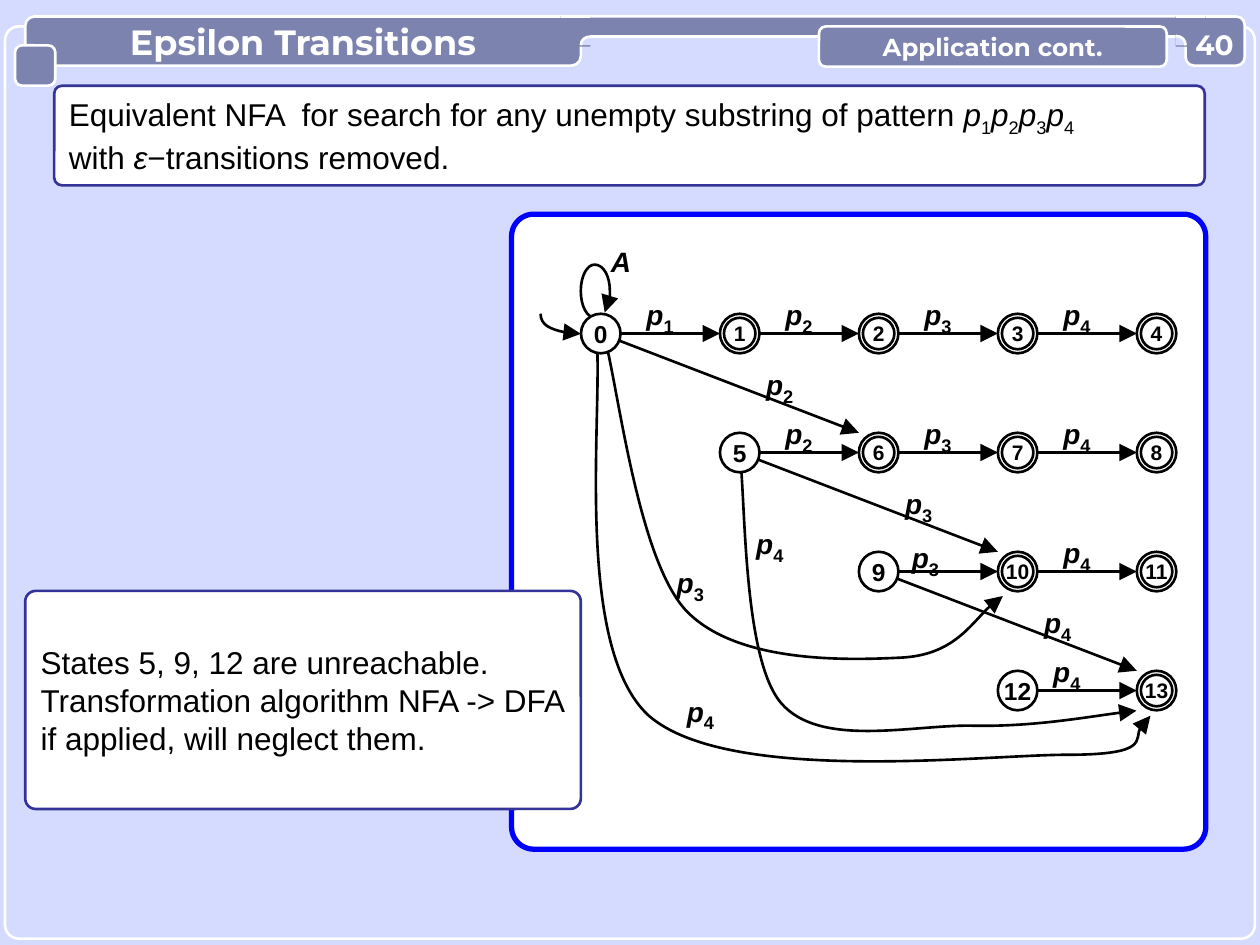
from dataclasses import dataclass

from lxml import etree
from pptx import Presentation
from pptx.dml.color import RGBColor
from pptx.enum.shapes import MSO_CONNECTOR, MSO_SHAPE
from pptx.enum.text import MSO_ANCHOR, PP_ALIGN
from pptx.oxml.ns import qn
from pptx.util import Pt

ROUND, OVAL, RECT = MSO_SHAPE.ROUNDED_RECTANGLE, MSO_SHAPE.OVAL, MSO_SHAPE.RECTANGLE
STRAIGHT = MSO_CONNECTOR.STRAIGHT
MID, TOP = MSO_ANCHOR.MIDDLE, MSO_ANCHOR.TOP
LEFT, MIDDLE = PP_ALIGN.LEFT, PP_ALIGN.CENTER


@dataclass(frozen=True)
class Theme:
    page: str = "D5DAFF"
    bar: str = "7D83AF"
    white: str = "FFFFFF"
    ink: str = "000000"
    blue: str = "0000FF"
    navy: str = "333399"
    body: str = "Arial"
    head: str = "Montserrat"
    title: int = 20
    text: int = 18
    mark: int = 16
    state: int = 14
    final: int = 12
    thin: float = 1.5
    thick: float = 3


T = Theme()
NODE, CORE, TAG = 22.6, 18, 23    # state circle, inner ring, edge label
ROWS = ((0, 1, 2, 3, 4), (5, 6, 7, 8), (9, 10, 11), (12, 13))
SHIFT = {9: (-7.2, 2.9), 12: (-5.8, 0)}    # label nudges by source state

# Each curve: a start, then three points to a Bezier segment
CURVES = (
    ((340.6, 190.8), (345.6, 226.8), (326.2, 368.6), (370.8, 409),
     (416.2, 448.6), (562.3, 431.3), (609.8, 431.3),
     (657.4, 431.3), (647.3, 413.3), (657.4, 409)),
    ((422.6, 258.5), (426.2, 283), (424.1, 375.8), (446.4, 401.8),
     (468.7, 427.7), (522, 414), (555.8, 414.7),
     (589.7, 415.4), (630, 408.2), (649.4, 406.1)),
    ((344.9, 190.8), (352.8, 216.7), (363.6, 317.5), (391.7, 348.5),
     (420.5, 379.4), (484.6, 377.3), (514.8, 375.8),
     (545, 374.4), (560.9, 347.8), (573.1, 340.6)),
    ((339.8, 181.4), (335.5, 181.4), (331.9, 175), (331.9, 166.3),
     (331.9, 157.7), (335.5, 151.2), (339.8, 151.2),
     (344.9, 151.2), (348.5, 157.7), (348.5, 166.3),
     (348.5, 171.4), (347.8, 175.7), (345.6, 178.6)),
    ((308.9, 179.3), (308.9, 185.8), (319, 190.8), (331.9, 190.8)),
)


def rgb(code):
    return RGBColor.from_string(code)


def spot(row, col):
    """Centre of a state on the grid."""
    return 343.3 + 79.4 * col, 190.6 + 68 * row


def paint(item, fill, line, width=T.thin):
    if fill:
        item.fill.solid()
        item.fill.fore_color.rgb = rgb(fill)
    else:
        item.fill.background()
    if line:
        item.line.color.rgb = rgb(line)
        item.line.width = Pt(width)
    else:
        item.line.fill.background()
    item.shadow.inherit = False


def write(item, lines, size, face=T.body, color=T.ink, bold=False,
          align=MIDDLE, anchor=MID):
    """Fill a frame; a line is a list of (text, style, size), style i or sub."""
    frame = item.text_frame
    frame.word_wrap, frame.vertical_anchor = False, anchor
    for n, line in enumerate(lines):
        para = frame.paragraphs[0] if n == 0 else frame.add_paragraph()
        para.alignment = align
        for text, style, *own in line:
            run = para.add_run()
            run.text = text
            look = {"name": face, "size": Pt(own[0] if own else size),
                    "bold": bold, "italic": style == "i"}
            for key, value in look.items():
                setattr(run.font, key, value)
            run.font.color.rgb = rgb(color)
            if style == "sub":
                run.font._element.set("baseline", "-25000")


def block(page, kind, box, fill, line, adj=None, width=T.thin):
    item = page.shapes.add_shape(kind, *map(Pt, box))
    if adj is not None:
        item.adjustments[0] = adj
    paint(item, fill, line, width)
    return item


def note(page, box, line, size, anchor=TOP, **look):
    item = page.shapes.add_textbox(*map(Pt, box))
    for side in ("left", "top", "right", "bottom"):
        setattr(item.text_frame, f"margin_{side}", 0)
    write(item, [line], size, bold=True, anchor=anchor, **look)
    item.text_frame.word_wrap = True


def tip(item):
    end = etree.SubElement(item.get_or_add_ln(), qn("a:tailEnd"))
    for key, value in {"type": "triangle", "w": "lg", "len": "lg"}.items():
        end.set(key, value)


def link(page, start, stop, color=T.ink, arrow=True):
    item = page.shapes.add_connector(STRAIGHT, *map(Pt, (*start, *stop)))
    item.line.color.rgb = rgb(color)
    item.line.width = Pt(T.thin)
    if arrow:
        tip(item)
    etree.SubElement(item._element.spPr, qn("a:effectLst"))


def curve(page, dots, line=T.ink, fill=None, arrow=False):
    """Draw Bezier segments; a spare last point is reached by a straight line."""
    dots = [(Pt(x), Pt(y)) for x, y in dots]
    pen = page.shapes.build_freeform(*dots[0])
    pen.add_line_segments(dots[1:], close=bool(fill))
    item = pen.convert_to_shape()
    legs = list(item._element.iter(qn("a:lnTo")))
    for n in range(0, len(legs) - 2, 3):
        bend = etree.Element(qn("a:cubicBezTo"))
        legs[n].addprevious(bend)
        for leg in legs[n:n + 3]:
            bend.append(leg[0])
            leg.getparent().remove(leg)
    paint(item, fill, line)
    if arrow:
        tip(item)


def state(page, name, row, col):
    x, y = spot(row, col)
    sole = col == row    # the first state of a row has a single ring
    for size in (NODE,) if sole else (NODE, CORE):
        item = block(page, OVAL, (x - size / 2, y - size / 2, size, size),
                     T.white, T.ink)
    write(item, [[(str(name), "")]], T.state if sole else T.final, bold=True)


def label(page, num, left, top):
    note(page, (left, top, TAG, TAG),
         [("p", "i"), (str(num), "sub", T.text)], T.mark)


def graph(page):
    half = NODE / 2
    for dots in CURVES:
        curve(page, dots, arrow=True)
    # Diagonals skip to the next row
    for row in range(3):
        x, y = spot(row + 1, row + 2)
        link(page, spot(row, row), (x - half, y - half))
        x, y = spot(row, row + 1)
        label(page, row + 2, x + 11.4, y + 17.3)
    # Rows of states
    for row, names in enumerate(ROWS):
        for col, name in enumerate(names, row):
            x, y = spot(row, col)
            if col < 4:
                link(page, (x + half, y), (spot(row, col + 1)[0] - half, y))
                dx, dy = SHIFT.get(name, (0, 0))
                label(page, col + 1, x + 22.4 + dx, y - 22.8 + dy)
            state(page, name, row, col)
    # Labels of the curves
    for num, left, top in ((4, 388.8, 394.6), (3, 383, 321.1), (4, 428.4, 298.8)):
        label(page, num, left, top)
    note(page, (343.4, 139.7, TAG, TAG), [("A", "i")], T.mark)


def joint(page, left, curl, corner):
    """Blend the thin top bar into a wider tab."""
    block(page, RECT, (left, 9.4, 17, 17.3), T.bar, None)
    link(page, (left, 9.4), (left + 17, 9.4), T.white, arrow=False)
    curve(page, (*curl, corner), None, T.page)
    curve(page, curl, T.white)


def header(page):
    look = {"face": T.head, "color": T.white, "bold": True}
    tab = block(page, ROUND, (14.4, 9.4, 317.5, 28.1), T.bar, T.white, 0.19)
    write(tab, [[("Epsilon Transitions", "")]], T.title, **look)
    block(page, ROUND, (331.9, 9.4, 351.4, 11.5), T.bar, T.white, 0.5)
    joint(page, 320.4, ((337.7, 20.9), (334.1, 20.9), (331.9, 23), (331.9, 25.9)),
          (337.7, 25.9))
    block(page, ROUND, (8.6, 25.9, 23, 23), T.bar, T.white, 0.17)
    block(page, ROUND, (677.5, 9.4, 33.8, 28.1), T.bar, T.white, 0.17)
    joint(page, 671.8, ((671.8, 20.5), (675.4, 20.5), (677.5, 23), (677.5, 25.9)),
          (671.8, 25.9))
    tab = block(page, ROUND, (468, 15.1, 198.7, 23), T.bar, T.white, 0.17)
    write(tab, [[("Application cont.", "")]], T.state, **look)
    note(page, (677.5, 15.8, 33, 19.4), [("40", "")], T.mark, MID,
         face=T.head, color=T.white)


def main():
    deck = Presentation()
    deck.slide_width, deck.slide_height = Pt(720), Pt(540)
    page = deck.slides.add_slide(deck.slide_layouts[6])
    page.background.fill.solid()
    page.background.fill.fore_color.rgb = rgb(T.page)
    # Frames and task
    block(page, ROUND, (2.9, 15.1, 714.2, 521.3), None, T.white, 0.015)
    block(page, ROUND, (292.3, 122.4, 396.7, 362.9), T.white, T.blue, 0.035, T.thick)
    task = block(page, ROUND, (31, 49, 657.4, 56.9), T.white, T.navy, 0.077)
    terms = [part for n in "1234" for part in (("p", "i"), (n, "sub"))]
    opening = "Equivalent NFA  for search for any unempty substring of pattern "
    write(task, [[(opening, ""), *terms],
                 [("with ", ""), ("ε", "i"), ("−transitions removed.", "")]],
          T.text, align=LEFT)
    graph(page)
    # Remark
    remark = block(page, ROUND, (14.4, 337.7, 317.5, 124.6), T.white, T.navy, 0.048)
    write(remark, [[("States 5, 9, 12 are unreachable.", "")],
                   [("Transformation algorithm NFA -> DFA", "")],
                   [("if applied, will neglect them.", "")]], T.text, align=LEFT)
    header(page)
    deck.save("out.pptx")


if __name__ == "__main__":
    main()
